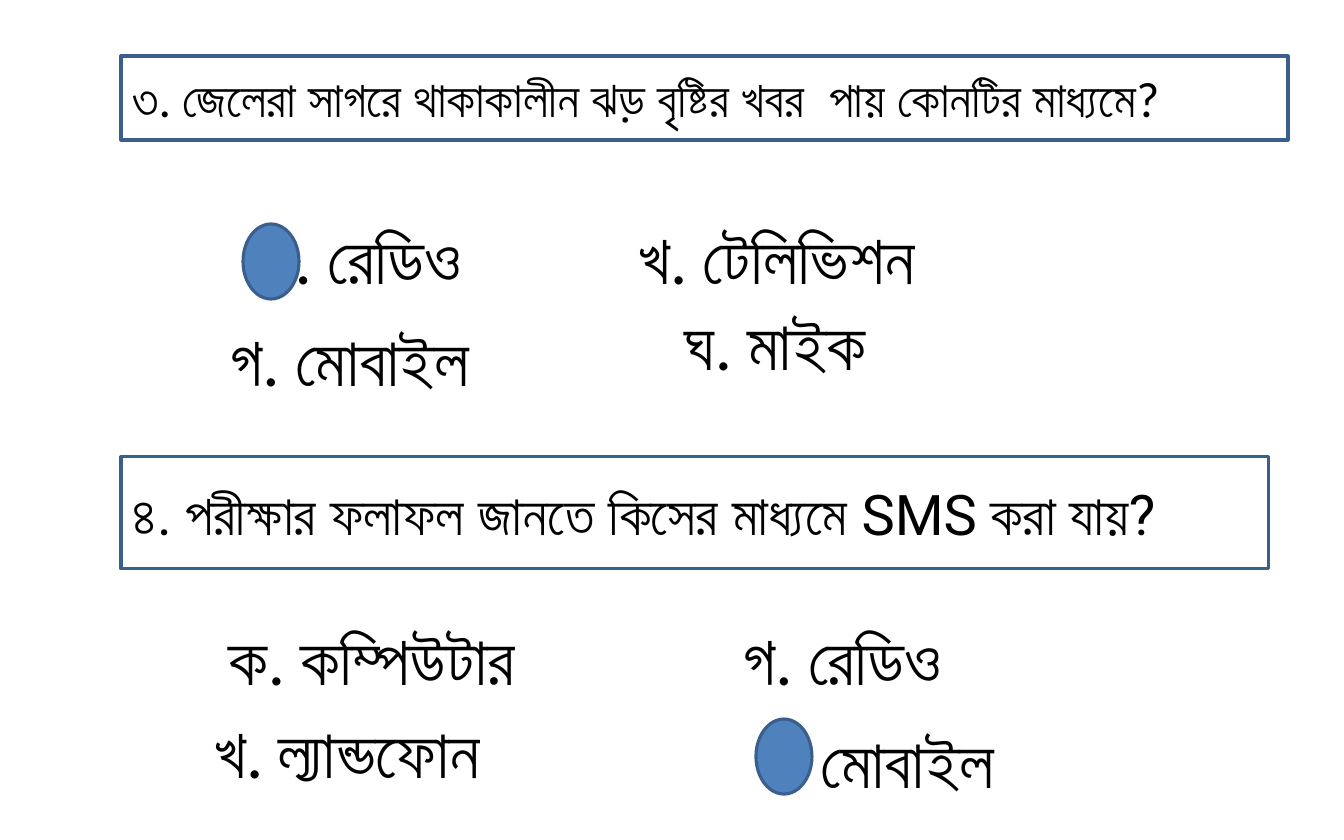
from pptx import Presentation
from pptx.dml.color import RGBColor
from pptx.enum.shapes import MSO_SHAPE as SHAPE
from pptx.enum.text import MSO_ANCHOR as ANCHOR, MSO_AUTO_SIZE as AUTO, PP_ALIGN as ALIGN
from pptx.util import Inches, Pt

WHITE, BLACK, BLUE, NAVY = "FFFFFF", "000000", "4F81BD", "3A5F8C"
ROW_H = 0.75
MARK_W, MARK_H = 0.5, 0.67

QUESTIONS = [
    {
        "text": "৩. জেলেরা সাগরে থাকাকালীন ঝড় বৃষ্টির খবর  পায় কোনটির মাধ্যমে?",
        "box": (1.08, 0.5, 10.42, ROW_H), "size": 32, "font": "Calibri",
        "options": [
            ("ক. রেডিও", 1.67, 1.92, 3.06, ALIGN.CENTER),
            ("খ. টেলিভিশন", 5.1, 1.92, 4.3, ALIGN.LEFT),
            ("গ. মোবাইল ", 1.5, 2.83, 3.4, ALIGN.CENTER),
            ("ঘ. মাইক ", 5.3, 2.69, 3.4, ALIGN.CENTER),
        ],
        "answer": (2.17, 2),
    },
    {
        "text": "৪. পরীক্ষার ফলাফল জানতে কিসের মাধ্যমে SMS করা যায়?",
        "box": (1.08, 4.08, 10.25, 1), "size": 36, "font": "Roboto",
        "options": [
            ("ক. কম্পিউটার", 1.42, 5.5, 3.8, ALIGN.CENTER),
            (" খ. ল্যান্ডফোন ", 1.2, 6.33, 3.8, ALIGN.CENTER),
            ("গ. রেডিও ", 5.7, 5.5, 3.8, ALIGN.CENTER),
            ("ঘ. মোবাইল ", 6, 6.42, 3.8, ALIGN.CENTER),
        ],
        "answer": (6.75, 6.42),
    },
]


def rgb(color):
    """Turn a hex string into a colour."""
    return RGBColor.from_string(color)


def paint(s, fill=None, line=None):
    """Set the fill and outline of a shape."""
    if fill:
        s.fill.solid()
        s.fill.fore_color.rgb = rgb(fill)
    else:
        s.fill.background()
    if line:
        s.line.color.rgb = rgb(line)
        s.line.width = Pt(2)
    else:
        s.line.fill.background()


def add_shape(slide, kind, box, fill=None, line=None):
    """Add a preset shape without a shadow."""
    s = slide.shapes.add_shape(kind, *map(Inches, box))
    s.shadow.inherit = False
    paint(s, fill, line)
    return s


def write(s, text, size, font="Calibri", align=ALIGN.LEFT):
    """Write one vertically centred line of text."""
    tf = s.text_frame
    tf.word_wrap, tf.auto_size, tf.vertical_anchor = True, AUTO.NONE, ANCHOR.MIDDLE
    p = tf.paragraphs[0]
    p.alignment = align
    r = p.add_run()
    r.text = text
    r.font.size, r.font.name = Pt(size), font
    r.font.color.rgb = rgb(BLACK)


def add_question(slide, question, title=None):
    """Add a question, its options and the mark on the right answer."""
    if title is None:
        s = add_shape(slide, SHAPE.RECTANGLE, question["box"], line=NAVY)
    else:
        s = title
        s.left, s.top, s.width, s.height = map(Inches, question["box"])
        paint(s, line=NAVY)
    write(s, question["text"], question["size"], question["font"])
    for text, x, y, w, align in question["options"]:
        s = add_shape(slide, SHAPE.RECTANGLE, (x, y, w, ROW_H), WHITE)
        write(s, text, 44, align=align)
        if align == ALIGN.LEFT:
            s.text_frame.margin_left = Inches(0.6)
    add_shape(slide, SHAPE.OVAL, (*question["answer"], MARK_W, MARK_H), BLUE, NAVY)


def main():
    """Build the quiz slide."""
    prs = Presentation()
    prs.slide_width, prs.slide_height = Inches(12), Inches(7.5)
    slide = prs.slides.add_slide(prs.slide_layouts[5])
    first, second = QUESTIONS
    add_question(slide, first, slide.shapes.title)
    add_question(slide, second)
    prs.save("out.pptx")


if __name__ == "__main__":
    main()
